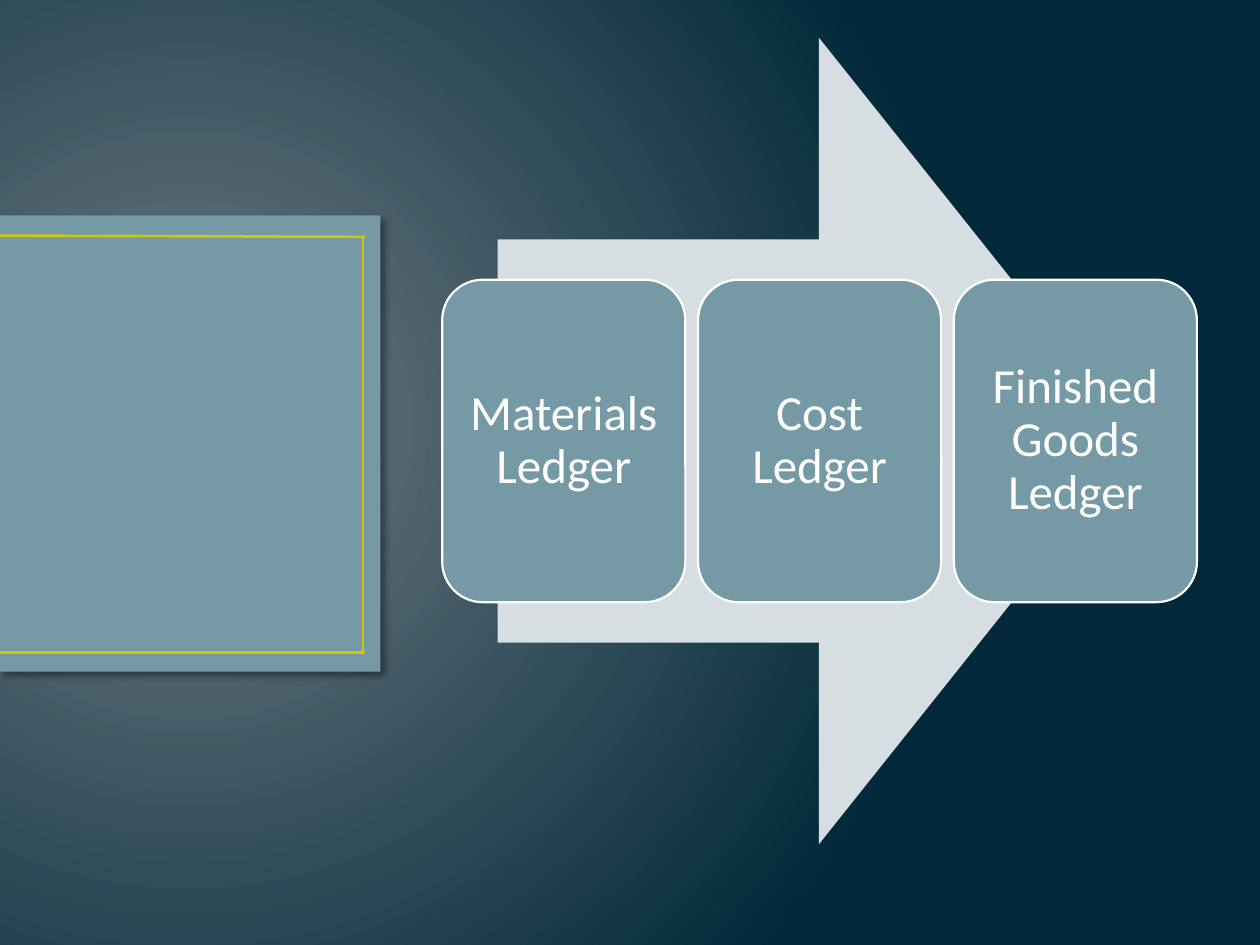
from dataclasses import dataclass

import pptx
import pptx.dml.color
import pptx.enum.shapes
import pptx.enum.text
import pptx.oxml
import pptx.oxml.ns
import pptx.util

Inches = pptx.util.Inches
Pt = pptx.util.Pt
qn = pptx.oxml.ns.qn
SHAPE = pptx.enum.shapes.MSO_SHAPE

COLORS = {
    "glow": "717C84",
    "night": "01293A",
    "panel": "759AA5",
    "trim": "CFC60D",
    "arrow": "D6DEE1",
    "white": "FFFFFF",
    "shadow": "000000",
}
NS = pptx.oxml.ns.nsdecls("a")


@dataclass
class Box:
    left: float
    top: float
    width: float
    height: float


@dataclass
class Line:
    x1: float
    y1: float
    x2: float
    y2: float


PANEL = Box(0, 1.71, 3.02, 3.62)
ARROW = Box(3.95, 0.3, 5.1, 6.4)
FIRST_LEDGER = Box(3.51, 2.22, 1.93, 2.56)
LEDGER_STEP = 2.03
LEDGERS = ["Materials Ledger", "Cost Ledger", "Finished Goods Ledger"]
TRIM_LINES = [
    Line(2.88, 1.87, 2.88, 5.17),
    Line(0, 1.87, 2.9, 1.88),
    Line(0, 5.18, 2.9, 5.18),
]


def rgb(name: str) -> pptx.dml.color.RGBColor:
    return pptx.dml.color.RGBColor.from_string(COLORS[name])


def paint_background(s) -> None:
    fill = s.background.fill
    fill.gradient()
    for stop, name, position in zip(fill.gradient_stops, ("glow", "night"), (0, 1)):
        stop.color.rgb = rgb(name)
        stop.position = position
    grad = s.element.find(".//" + qn("a:gradFill"))
    grad.replace(grad.find(qn("a:lin")), pptx.oxml.parse_xml(
        f'<a:path {NS} path="circle">'
        '<a:fillToRect l="15000" t="50000" r="85000" b="60000"/></a:path>'))


def add_box(s, kind, box: Box, fill: str, line: str = ""):
    sp = s.shapes.add_shape(kind, Inches(box.left), Inches(box.top),
                            Inches(box.width), Inches(box.height))
    sp.shadow.inherit = False
    sp.fill.solid()
    sp.fill.fore_color.rgb = rgb(fill)
    if line:
        sp.line.color.rgb = rgb(line)
        sp.line.width = Pt(1.25)
    else:
        sp.line.fill.background()
    return sp


def add_shadow(sp) -> None:
    sp.element.spPr.find(qn("a:effectLst")).append(pptx.oxml.parse_xml(
        f'<a:outerShdw {NS} blurRad="{Pt(4)}" dist="{Pt(3)}" dir="2700000" '
        f'algn="tl" rotWithShape="0"><a:srgbClr val="{COLORS["shadow"]}">'
        '<a:alpha val="40000"/></a:srgbClr></a:outerShdw>'))


def add_line(s, line: Line) -> None:
    cxn = s.shapes.add_connector(
        pptx.enum.shapes.MSO_CONNECTOR.STRAIGHT,
        Inches(line.x1), Inches(line.y1), Inches(line.x2), Inches(line.y2))
    cxn.line.color.rgb = rgb("trim")
    cxn.line.width = Pt(1.5)
    cxn.element.spPr.append(pptx.oxml.parse_xml(f"<a:effectLst {NS}/>"))


def add_ledger(s, box: Box, text: str) -> None:
    sp = add_box(s, SHAPE.ROUNDED_RECTANGLE, box, "panel", "white")
    tf = sp.text_frame
    frame_format = {
        "word_wrap": True,
        "vertical_anchor": pptx.enum.text.MSO_ANCHOR.MIDDLE,
        "margin_left": Inches(0.12),
        "margin_top": Inches(0.12),
        "margin_right": Inches(0.12),
        "margin_bottom": Inches(0.12),
    }
    for name, value in frame_format.items():
        setattr(tf, name, value)
    p = tf.paragraphs[0]
    p.alignment = pptx.enum.text.PP_ALIGN.CENTER
    p.line_spacing = 0.9
    r = p.add_run()
    r.text = text
    for name, value in {"name": "Calibri", "size": Pt(28)}.items():
        setattr(r.font, name, value)
    r.font.color.rgb = rgb("white")


def main() -> None:
    prs = pptx.Presentation()
    prs.slide_width = Inches(10)
    prs.slide_height = Inches(7.5)
    s = prs.slides.add_slide(prs.slide_layouts[6])
    paint_background(s)
    add_shadow(add_box(s, SHAPE.RECTANGLE, PANEL, "panel"))
    for line in TRIM_LINES:
        add_line(s, line)
    add_box(s, SHAPE.RIGHT_ARROW, ARROW, "arrow")
    for i, text in enumerate(LEDGERS):
        box = Box(FIRST_LEDGER.left + i * LEDGER_STEP, FIRST_LEDGER.top,
                  FIRST_LEDGER.width, FIRST_LEDGER.height)
        add_ledger(s, box, text)
    prs.save("out.pptx")


if __name__ == "__main__":
    main()
